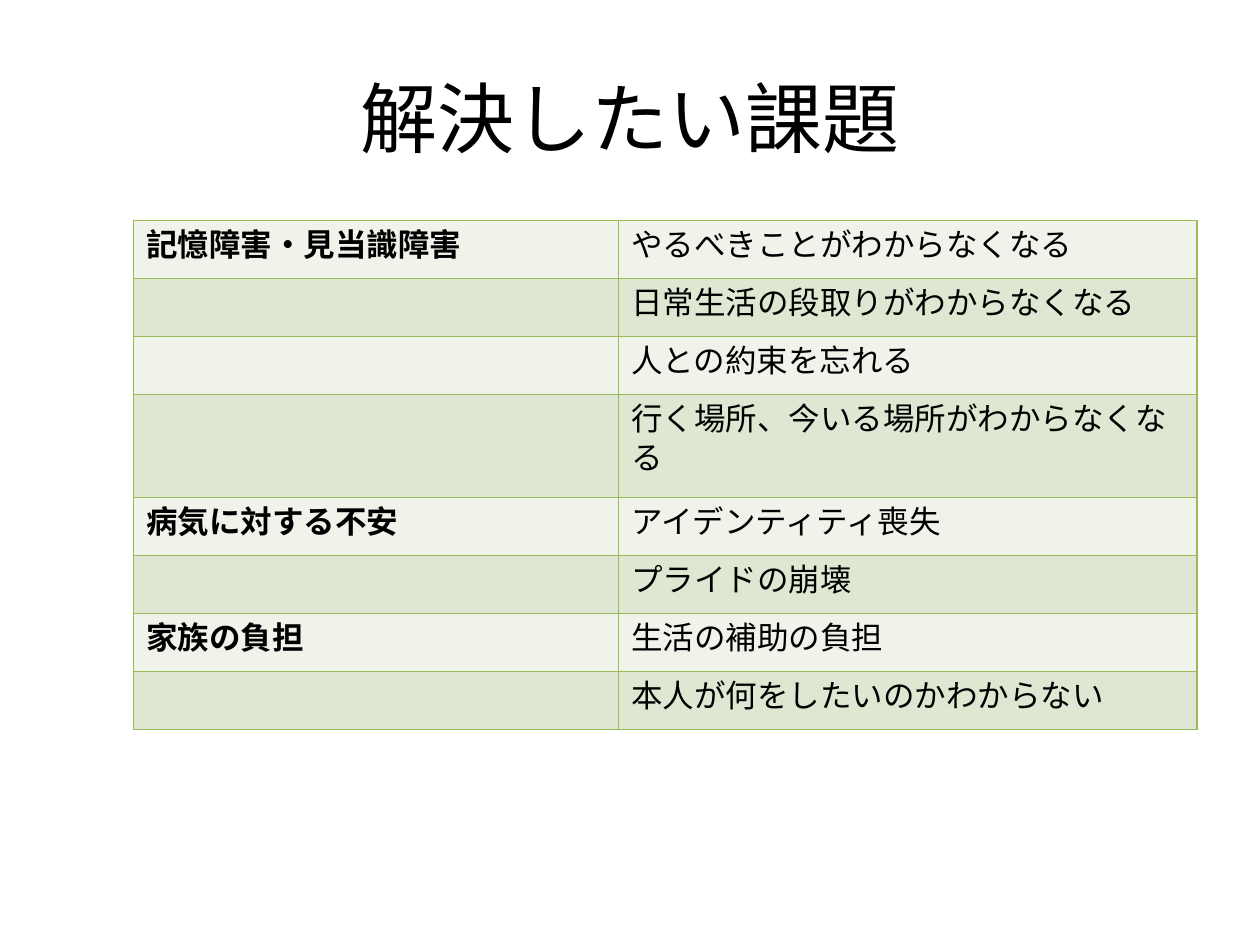
from lxml import etree
from pptx import Presentation
from pptx.dml.color import RGBColor
from pptx.enum import text
from pptx.oxml import ns
from pptx.util import Inches, Pt

TITLE = "解決したい課題"
ISSUES = [
    ("記憶障害・見当識障害", [
        "やるべきことがわからなくなる",
        "日常生活の段取りがわからなくなる",
        "人との約束を忘れる",
        "行く場所、今いる場所がわからなくなる",
    ]),
    ("病気に対する不安", ["アイデンティティ喪失", "プライドの崩壊"]),
    ("家族の負担", ["生活の補助の負担", "本人が何をしたいのかわからない"]),
]
COLORS = {"text": "000000", "border": "9BBB59", "odd": "EFF3EA", "even": "DEE7D1"}
COLUMN_WIDTHS = (3.85, 4.59)
LINE_HEIGHT = 0.36
CELL_MARGINS = 0.1
CHARACTERS_PER_LINE = 17


def write(frame, content, size=18, font="Calibri", bold=False, align=None):
    paragraph = frame.paragraphs[0]
    paragraph.alignment = align
    paragraph.font.size = Pt(size)
    if not content:
        return
    run = paragraph.add_run()
    run.text = content
    run.font.size = Pt(size)
    run.font.bold = bold
    run.font.color.rgb = RGBColor.from_string(COLORS["text"])
    run.font.name = font
    etree.SubElement(run.font._element, ns.qn("a:ea"), typeface=font)


def style_cell(cell, fill):
    properties = cell._tc.get_or_add_tcPr()
    for side in ("lnL", "lnR", "lnT", "lnB"):
        line = etree.SubElement(properties, ns.qn(f"a:{side}"), w=str(Pt(1)))
        solid = etree.SubElement(line, ns.qn("a:solidFill"))
        etree.SubElement(solid, ns.qn("a:srgbClr"), val=COLORS["border"])
    cell.fill.solid()
    cell.fill.fore_color.rgb = RGBColor.from_string(COLORS[fill])


def row_height(detail):
    lines = -(-len(detail) // CHARACTERS_PER_LINE)
    return Inches(lines * LINE_HEIGHT + CELL_MARGINS)


def add_title(slide):
    box = slide.shapes.add_textbox(Inches(0.5), Inches(0.3), Inches(9), Inches(1.25))
    frame = box.text_frame
    frame.word_wrap = True
    frame.vertical_anchor = text.MSO_ANCHOR.MIDDLE
    write(frame, TITLE, size=44, font="Noto Sans CJK JP", align=text.PP_ALIGN.CENTER)


def add_issue_table(slide):
    rows = [(issue if i == 0 else "", detail)
            for issue, details in ISSUES for i, detail in enumerate(details)]
    heights = [row_height(detail) for _, detail in rows]
    table = slide.shapes.add_table(
        len(rows), len(COLUMN_WIDTHS), Inches(1.06), Inches(1.75),
        Inches(sum(COLUMN_WIDTHS)), sum(heights)).table
    table.first_row = False
    for column, width in zip(table.columns, COLUMN_WIDTHS):
        column.width = Inches(width)
    for r, row in enumerate(rows):
        table.rows[r].height = heights[r]
        for c, content in enumerate(row):
            cell = table.cell(r, c)
            write(cell.text_frame, content, bold=c == 0)
            style_cell(cell, "even" if r % 2 else "odd")


def main():
    presentation = Presentation()
    presentation.slide_width = Inches(10)
    presentation.slide_height = Inches(7.5)
    slide = presentation.slides.add_slide(presentation.slide_layouts[6])
    add_title(slide)
    add_issue_table(slide)
    presentation.save("out.pptx")


if __name__ == "__main__":
    main()
